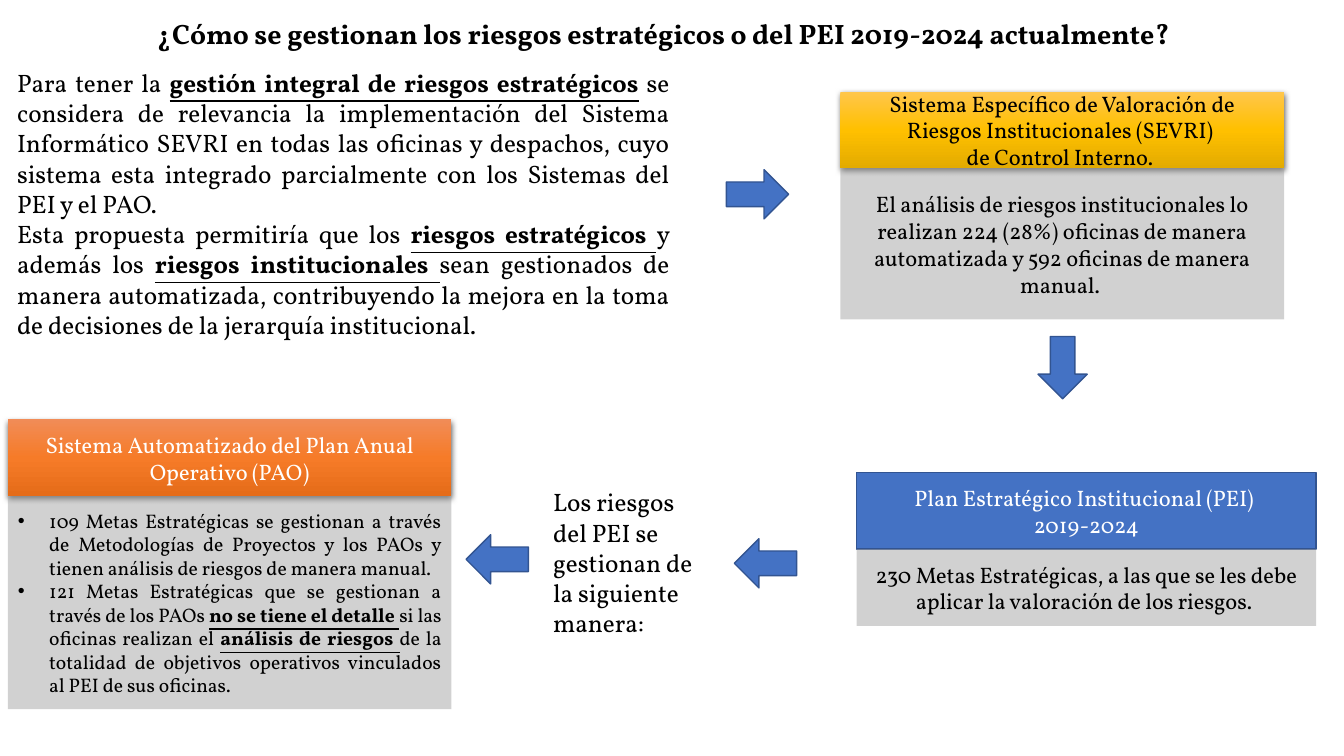
from copy import deepcopy

from lxml.etree import SubElement
from pptx import Presentation
from pptx.dml.color import RGBColor
from pptx.enum.shapes import MSO_SHAPE
from pptx.enum.text import MSO_ANCHOR, PP_ALIGN
from pptx.oxml.ns import qn
from pptx.util import Cm, Pt

FONT = "Vollkorn"
BLACK, WHITE, BLUE, DARK_BLUE, GRAY = "000000", "FFFFFF", "4472C4", "325491", "A5A5A5"
AMBER = ("FFC64B", "FFC000", "E3AB00")
ORANGE = ("F18C57", "F67B28", "E56C19")
HEADER_HEIGHT = 1.93
ARROW_SIZE = (1.24, 1.57)

TITLE = "¿Cómo se gestionan los riesgos estratégicos o del PEI 2019-2024 actualmente?"
INTRO = [
    "Para tener la *gestión integral de riesgos estratégicos* se considera de relevancia la "
    "implementación del Sistema Informático SEVRI en todas las oficinas y despachos, cuyo "
    "sistema esta integrado parcialmente con los Sistemas del PEI y el PAO. ",
    "Esta propuesta permitiría que los *riesgos estratégicos *y además los *riesgos "
    "institucionales *sean gestionados de manera automatizada, contribuyendo la mejora en la "
    "toma de decisiones de la jerarquía institucional. ",
]
BRIDGE = "Los riesgos del PEI se gestionan de la siguiente manera:"
SEVRI = [
    "Sistema Específico de Valoración de Riesgos Institucionales (SEVRI) ",
    "de Control Interno. ",
]
SEVRI_DETAIL = (
    "El análisis de riesgos institucionales lo realizan 224 (28%) oficinas de manera "
    "automatizada y 592 oficinas de manera manual. "
)
PEI = ["Plan Estratégico Institucional (PEI) ", "2019-2024"]
PEI_DETAIL = (
    "230 Metas Estratégicas, a las que se les debe aplicar la valoración de los riesgos. "
)
PAO = ["Sistema Automatizado del Plan Anual Operativo (PAO)"]
PAO_DETAIL = [
    "109 Metas Estratégicas se gestionan a través de Metodologías de Proyectos y los PAOs y "
    "tienen análisis de riesgos de manera manual. ",
    "121 Metas Estratégicas que se gestionan a través de los PAOs *no se tiene el detalle *si "
    "las oficinas realizan el *análisis de riesgos *de la totalidad de objetivos operativos "
    "vinculados al PEI de sus oficinas. ",
]


def rgb(code):
    return RGBColor.from_string(code)


def set_values(target, values):
    for name, value in values.items():
        setattr(target, name, value)


def write(frame, paragraphs, size, color=BLACK, align=PP_ALIGN.CENTER, bold=False, bullets=False):
    """Fill the frame; words between asterisks are bold and underlined."""
    frame.word_wrap = True
    for index, words in enumerate(paragraphs):
        paragraph = frame.add_paragraph() if index else frame.paragraphs[0]
        paragraph.alignment = align
        if bullets:
            properties = paragraph._p.get_or_add_pPr()
            properties.set("marL", str(Cm(0.79)))
            properties.set("indent", str(-Cm(0.79)))
            SubElement(properties, qn("a:buFont"), typeface="Arial")
            SubElement(properties, qn("a:buChar"), char="•")
        for position, piece in enumerate(words.split("*")):
            if not piece:
                continue
            stressed = position % 2 == 1
            run = paragraph.add_run()
            run.text = piece
            set_values(run.font, {"name": FONT, "size": Pt(size),
                                  "bold": bold or stressed, "underline": stressed})
            run.font.color.rgb = rgb(color)


def add_text(slide, box, paragraphs, size, **style):
    label = slide.shapes.add_textbox(*map(Cm, box))
    write(label.text_frame, paragraphs, size, **style)


def add_block(slide, box, kind=MSO_SHAPE.RECTANGLE, fill=BLUE, line=None):
    block = slide.shapes.add_shape(kind, *map(Cm, box))
    block.shadow.inherit = False
    block.fill.solid()
    block.fill.fore_color.rgb = rgb(fill)
    if line:
        block.line.color.rgb = rgb(line)
        block.line.width = Pt(1)
    else:
        block.line.fill.background()
    return block


def shade(block, colors):
    """Give the block a vertical three-colour gradient and a soft shadow."""
    block.fill.gradient()
    block.fill.gradient_angle = 270
    properties = block._element.spPr
    stops = properties.find(".//" + qn("a:gsLst"))
    stops.append(deepcopy(stops[0]))
    for stop, position, color in zip(block.fill.gradient_stops, (0, 0.5, 1), colors):
        stop.position = position
        stop.color.rgb = rgb(color)
    shadow = SubElement(properties.find(qn("a:effectLst")), qn("a:outerShdw"),
                        blurRad=str(Pt(4.5)), dist=str(Pt(1.5)), dir="5400000",
                        algn="ctr", rotWithShape="0")
    tint = SubElement(shadow, qn("a:srgbClr"), val=BLACK)
    SubElement(tint, qn("a:alpha"), val="63000")


def add_card(slide, box, heading, detail, gradient=None, heading_color=WHITE, **detail_style):
    """Stack a coloured heading over a translucent grey body inside the box."""
    left, top, width, height = box
    header = add_block(slide, (left, top, width, HEADER_HEIGHT),
                       line=None if gradient else DARK_BLUE)
    if gradient:
        shade(header, gradient)
    body = add_block(slide, (left, top + HEADER_HEIGHT, width, height - HEADER_HEIGHT), fill=GRAY)
    tint = body._element.spPr.find(qn("a:solidFill"))[0]
    SubElement(tint, qn("a:alpha"), val="50000")
    for part in (header, body):
        part.text_frame.vertical_anchor = MSO_ANCHOR.MIDDLE
    write(header.text_frame, heading, 16, heading_color)
    write(body.text_frame, detail, **{"size": 16, **detail_style})


def add_arrow(slide, left, top, rotation):
    arrow = add_block(slide, (left, top, *ARROW_SIZE), MSO_SHAPE.DOWN_ARROW, line=DARK_BLUE)
    arrow.rotation = rotation


def build_risk_slide(slide):
    add_text(slide, (1.09, 0.28, 31.27, 1.12), [TITLE], 20, bold=True)
    add_text(slide, (0.18, 1.57, 16.94, 7.19), INTRO, 18, align=PP_ALIGN.JUSTIFY)
    add_card(slide, (21.18, 2.31, 11.18, 5.74), SEVRI, [SEVRI_DETAIL], AMBER, BLACK)
    add_card(slide, (21.59, 11.91, 11.58, 3.86), PEI, [PEI_DETAIL])
    add_card(slide, (0.2, 10.57, 11.18, 7.3), PAO, PAO_DETAIL, ORANGE,
             size=14, align=PP_ALIGN.JUSTIFY, bullets=True)
    add_text(slide, (13.69, 12.14, 4.27, 4.11), [BRIDGE], 18, align=PP_ALIGN.LEFT)
    for left, top, rotation in ((18.47, 4.11, 270), (26.16, 8.48, 0),
                                (18.67, 13.41, 90), (11.91, 13.31, 90)):
        add_arrow(slide, left, top, rotation)


def main():
    deck = Presentation()
    set_values(deck, {"slide_width": Cm(33.87), "slide_height": Cm(19.05)})
    build_risk_slide(deck.slides.add_slide(deck.slide_layouts[6]))
    deck.save("out.pptx")


if __name__ == "__main__":
    main()
